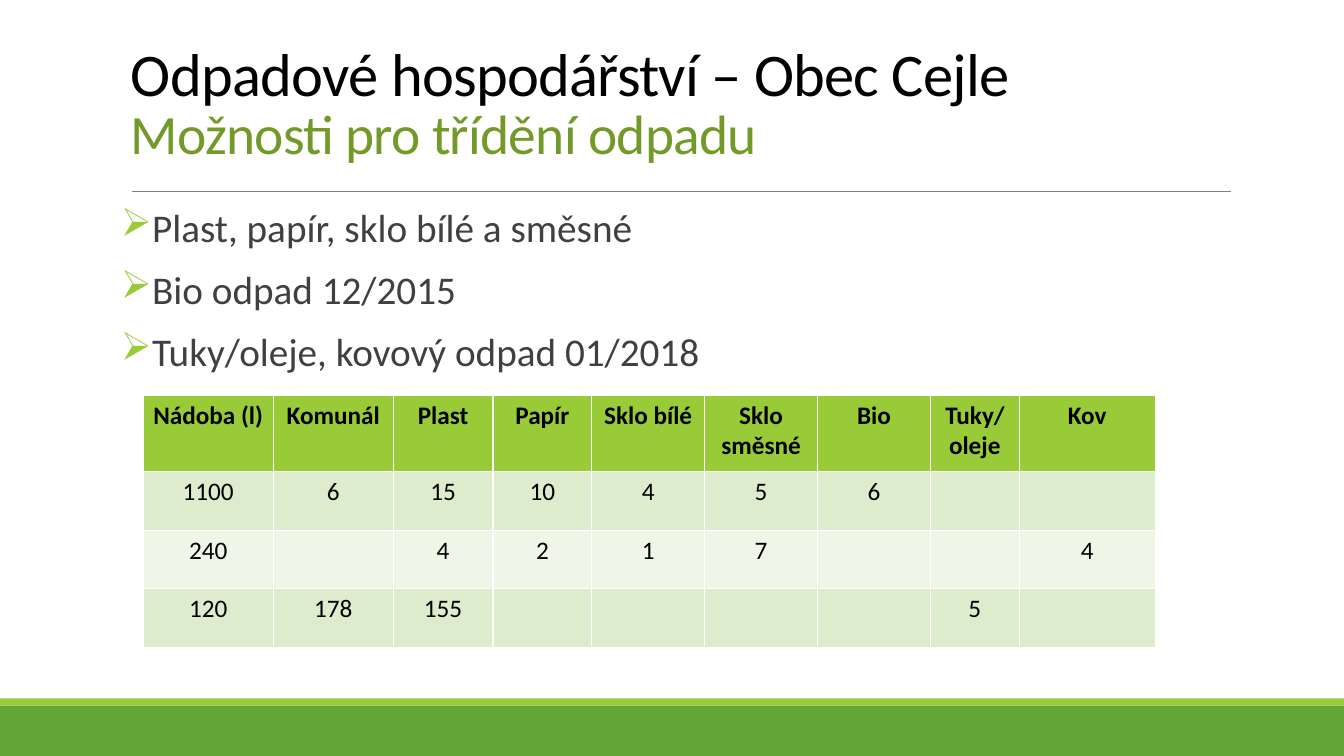
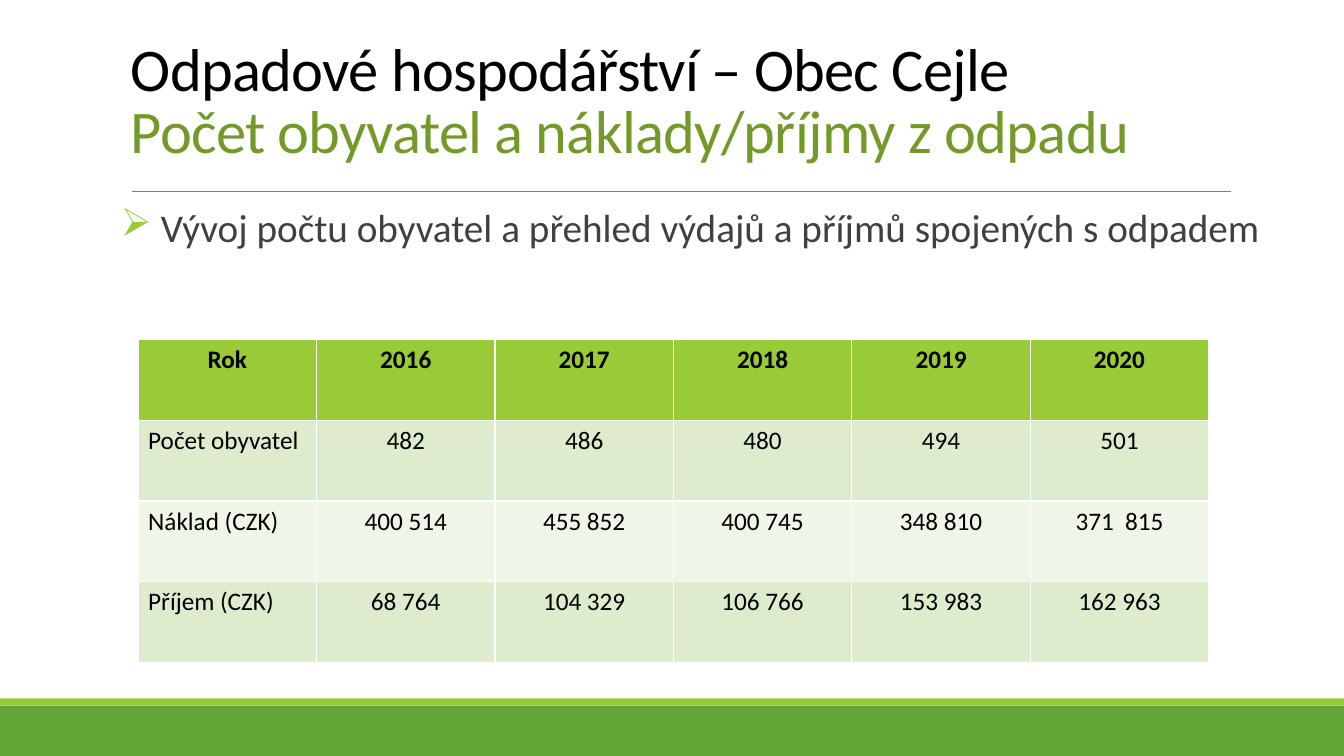
from lxml import etree
from pptx import Presentation
from pptx.dml.color import RGBColor
from pptx.enum import shapes, text
from pptx.oxml import ns
from pptx.util import Inches, Pt

FONT = "Calibri"
BLACK = RGBColor(0x00, 0x00, 0x00)
BODY_GREY = RGBColor(0x40, 0x40, 0x40)
RULE_GREY = RGBColor(0x80, 0x80, 0x80)
LIME = RGBColor(0x99, 0xCB, 0x38)
GREEN = RGBColor(0x63, 0xA5, 0x37)
OLIVE = RGBColor(0x73, 0x9A, 0x28)
ROW_TINTS = (RGBColor(0xDE, 0xEC, 0xCE), RGBColor(0xEF, 0xF6, 0xE8))

SLIDE_WIDTH = 13.33
TEXT_LEFT = 1.2
TITLE = "Odpadové hospodářství – Obec Cejle"

CONTAINER_ROWS = [
    ["Nádoba (l)", "Komunál", "Plast", "Papír", "Sklo bílé", "Sklo směsné",
     "Bio", "Tuky/oleje", "Kov"],
    ["1100", "6", "15", "10", "4", "5", "6", "", ""],
    ["240", "", "4", "2", "1", "7", "", "", "4"],
    ["120", "178", "155", "", "", "", "", "5", ""],
]
COST_ROWS = [
    ["Rok", "2016", "2017", "2018", "2019", "2020"],
    ["Počet obyvatel", "482", "486", "480", "494", "501"],
    ["Náklad (CZK)", "400 514", "455 852", "400 745", "348 810", "371  815"],
    ["Příjem (CZK)", "68 764", "104 329", "106 766", "153 983", "162 963"],
]


def style_font(font, size, color, bold=False):
    font.name = FONT
    font.size = Pt(size)
    font.color.rgb = color
    font.bold = bold


def add_band(page, top, height, color):
    band = page.shapes.add_shape(shapes.MSO_SHAPE.RECTANGLE, 0, Inches(top),
                                 Inches(SLIDE_WIDTH), Inches(height))
    band.shadow.inherit = False
    band.fill.solid()
    band.fill.fore_color.rgb = color
    band.line.fill.background()


def add_title_rule(page):
    rule = page.shapes.add_connector(shapes.MSO_CONNECTOR.STRAIGHT, Inches(1.31),
                                     Inches(1.9), Inches(12.21), Inches(1.9))
    rule.line.color.rgb = RULE_GREY
    rule.line.width = Pt(0.5)
    etree.SubElement(rule._element.spPr, ns.qn("a:effectLst"))


def add_text_frame(page, top, width, height):
    box = page.shapes.add_textbox(Inches(TEXT_LEFT), Inches(top),
                                  Inches(width), Inches(height))
    box.text_frame.word_wrap = True
    return box.text_frame


def add_title(page, subtitle, subtitle_size):
    frame = add_text_frame(page, 0.31, 11, 1.38)
    frame.vertical_anchor = text.MSO_ANCHOR.BOTTOM
    para = frame.paragraphs[0]
    para.line_spacing = 0.85
    lines = ((TITLE, 43.2, BLACK), (subtitle, subtitle_size, OLIVE))
    for index, (line, size, color) in enumerate(lines):
        if index:
            para.add_line_break()
        span = para.add_run()
        span.text = line
        style_font(span.font, size, color)
        span._r.get_or_add_rPr().set("spc", "-50")


def set_bullet(para):
    properties = para._p.get_or_add_pPr()
    properties.set("marL", str(Inches(0.1)))
    properties.set("indent", str(-Inches(0.1)))
    color = etree.SubElement(properties, ns.qn("a:buClr"))
    etree.SubElement(color, ns.qn("a:srgbClr"), val=str(LIME))
    etree.SubElement(properties, ns.qn("a:buChar"), char="➢")


def add_bullets(page, items, width):
    frame = add_text_frame(page, 2.02, width, 4.4)
    frame.margin_left = frame.margin_right = 0
    for index, item in enumerate(items):
        para = frame.add_paragraph() if index else frame.paragraphs[0]
        para.text = item
        para.line_spacing = 0.9
        para.space_before = Pt(12)
        para.space_after = Pt(2)
        set_bullet(para)
        style_font(para.font, 28, BODY_GREY)


def add_data_table(page, rows, left, top, widths, heights, label_align):
    """Header row, tinted body rows; label_align applies to the first body column."""
    table = page.shapes.add_table(len(rows), len(widths), Inches(left), Inches(top),
                                  Inches(sum(widths)), Inches(sum(heights))).table
    for column, width in zip(table.columns, widths):
        column.width = Inches(width)
    for r, (values, height) in enumerate(zip(rows, heights)):
        table.rows[r].height = Inches(height)
        for c, value in enumerate(values):
            cell = table.cell(r, c)
            cell.fill.solid()
            cell.fill.fore_color.rgb = ROW_TINTS[(r - 1) % 2] if r else LIME
            para = cell.text_frame.paragraphs[0]
            if value:
                para.text = value
            para.alignment = label_align if r and c == 0 else text.PP_ALIGN.CENTER
            style_font(para.font, 18, BLACK, bold=r == 0)


def add_page(deck, subtitle, subtitle_size):
    page = deck.slides.add_slide(deck.slide_layouts[6])
    add_band(page, 7, 0.5, GREEN)
    add_band(page, 6.93, 0.07, LIME)
    add_title_rule(page)
    add_title(page, subtitle, subtitle_size)
    return page


def main():
    deck = Presentation()
    deck.slide_width = Inches(SLIDE_WIDTH)
    deck.slide_height = Inches(7.5)

    page = add_page(deck, "Možnosti pro třídění odpadu", 39.6)
    add_bullets(page, ["Plast, papír, sklo bílé a směsné", "Bio odpad 12/2015",
                       "Tuky/oleje, kovový odpad 01/2018"], 11)
    add_data_table(page, CONTAINER_ROWS, 1.42, 3.92,
                   [1.29, 1.19, 0.99, 0.98, 1.12, 1.12, 1.12, 0.88, 1.35],
                   [0.76] + [0.58] * 3, text.PP_ALIGN.CENTER)

    page = add_page(deck, "Počet obyvatel a náklady/příjmy z odpadu", 43.2)
    add_bullets(page, [" Vývoj počtu obyvatel a přehled výdajů a příjmů "
                       "spojených s odpadem"], 11.34)
    add_data_table(page, COST_ROWS, 1.37, 3.37, [1.77] * 6, [0.8] * 4,
                   text.PP_ALIGN.LEFT)

    deck.save("out.pptx")


if __name__ == "__main__":
    main()
